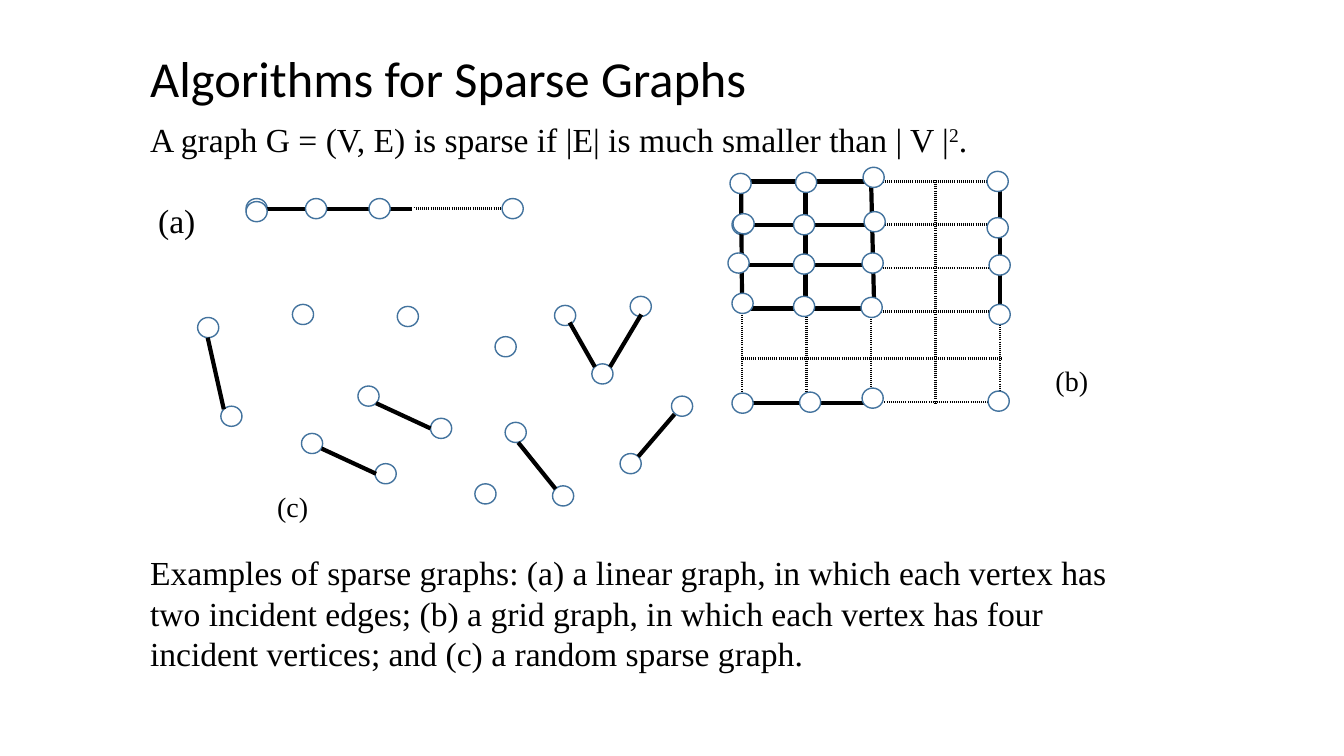
from pptx import Presentation
from pptx.dml.color import RGBColor
from pptx.enum.shapes import MSO_CONNECTOR, MSO_SHAPE
from pptx.enum.text import MSO_ANCHOR, PP_ALIGN
from pptx.oxml import parse_xml
from pptx.oxml.ns import nsdecls
from pptx.util import Inches, Pt

BLACK = RGBColor(0x00, 0x00, 0x00)
WHITE = RGBColor(0xFF, 0xFF, 0xFF)
VERTEX_BLUE = RGBColor(0x43, 0x73, 0x9E)
SERIF = "Times New Roman"

LINEAR_VERTICES = [(0.04, 0.1), (0.63, 0.07), (1.26, 0.07), (2.58, 0.07)]

GRID_DOTS = [["", "", "TRB", "LTB"]] * 3 + [
    ["LRB", "LRB", "LT", "TR"],
    ["LTR", "LTR", "LB", "RB"],
]
GRID_EDGES = [
    (0.15, 0.2, 1.44, 0.2), (0.15, 0.63, 1.44, 0.63), (0.15, 1.03, 1.44, 1.03),
    (0.16, 1.46, 1.43, 1.46), (0.15, 0.19, 0.16, 1.42), (0.18, 2.4, 1.44, 2.4),
    (0.79, 0.23, 0.79, 1.46), (1.44, 0.2, 1.47, 1.43), (2.72, 0.26, 2.72, 1.49),
]
GRID_VERTICES = [
    (0.02, 0.91), (0.07, 0.52), (0.04, 0.12), (0.69, 0.11), (1.36, 0.06),
    (2.59, 0.1), (2.59, 0.56), (1.37, 0.5), (0.67, 0.53), (0.67, 0.92),
    (1.35, 0.91), (2.61, 0.93), (0.06, 1.31), (0.67, 1.34), (1.34, 1.35),
    (2.61, 1.42), (2.6, 2.28), (1.35, 2.25), (0.73, 2.29), (0.06, 2.3),
]

RANDOM_VERTICES = [
    (0.06, 0.25), (0.29, 1.13), (1.09, 1.4), (1.82, 1.7), (1.65, 0.93),
    (2.37, 1.25), (1, 0.12), (2.04, 0.14), (3.01, 0.44), (2.81, 1.9),
    (3.11, 1.29), (3.58, 1.92), (3.6, 0.13), (4.35, 0.04), (3.97, 0.71),
    (4.25, 1.6), (4.76, 1.03),
]
RANDOM_EDGES = [
    (0.16, 0.45, 0.32, 1.16), (1.83, 1.1, 2.37, 1.35), (1.29, 1.55, 1.83, 1.8),
    (3.24, 1.49, 3.61, 1.95), (3.75, 0.3, 4, 0.74), (4.46, 0.22, 4.15, 0.74),
    (4.79, 1.21, 4.43, 1.63),
]


def write(paragraph, text, size=24, font=SERIF, color=BLACK, raised=False):
    """Append a formatted run to a paragraph."""
    run = paragraph.add_run()
    run.text = text
    run.font.size = Pt(size)
    run.font.name = font
    run.font.color.rgb = color
    if raised:
        run.font._element.set("baseline", "30000")


def add_label(slide, left, top, text):
    """Add the letter that names one of the graphs."""
    label = slide.shapes.add_textbox(Inches(left), Inches(top), Inches(0.67), Inches(0.44))
    label.text_frame.word_wrap = True
    write(label.text_frame.paragraphs[0], text, size=20)


def add_vertices(slide, left, top, vertices):
    """Add white round vertices at offsets from the graph's corner."""
    for x, y in vertices:
        vertex = slide.shapes.add_shape(
            MSO_SHAPE.OVAL, Inches(left + x), Inches(top + y), Inches(0.21), Inches(0.2))
        vertex.shadow.inherit = False
        vertex.fill.solid()
        vertex.fill.fore_color.rgb = WHITE
        vertex.line.color.rgb = VERTEX_BLUE
        vertex.line.width = Pt(1)


def add_edges(slide, left, top, edges):
    """Add thick black edges at offsets from the graph's corner."""
    for x1, y1, x2, y2 in edges:
        edge = slide.shapes.add_connector(
            MSO_CONNECTOR.STRAIGHT, Inches(left + x1), Inches(top + y1),
            Inches(left + x2), Inches(top + y2))
        edge.line.color.rgb = BLACK
        edge.line.width = Pt(3)
        edge._element.spPr.append(parse_xml(f"<a:effectLst {nsdecls('a')}/>"))


def add_dotted_table(slide, left, top, widths, heights, dots):
    """Add a white table whose listed cell sides are dotted."""
    table = slide.shapes.add_table(
        len(heights), len(widths), Inches(left), Inches(top),
        Inches(sum(widths)), Inches(sum(heights))).table
    table.first_row = table.horz_banding = False
    for column, width in zip(table.columns, widths):
        column.width = Inches(width)
    for row, height, row_dots in zip(table.rows, heights, dots):
        row.height = Inches(height)
        for cell, sides in zip(row.cells, row_dots):
            properties = cell._tc.get_or_add_tcPr()
            for side in "LRTB":
                if side in sides:
                    properties.append(parse_xml(
                        f'<a:ln{side} {nsdecls("a")} w="28575"><a:solidFill>'
                        f'<a:srgbClr val="{BLACK}"/></a:solidFill>'
                        f'<a:prstDash val="dot"/></a:ln{side}>'))
            cell.fill.solid()
            cell.fill.fore_color.rgb = WHITE


def add_title(slide, left, top, width, height):
    """Place and format the slide title."""
    title = slide.shapes.title
    title.left, title.top = Inches(left), Inches(top)
    title.width, title.height = Inches(width), Inches(height)
    title.text_frame.word_wrap = False
    title.text_frame.vertical_anchor = MSO_ANCHOR.TOP
    heading = title.text_frame.paragraphs[0]
    heading.alignment = PP_ALIGN.LEFT
    write(heading, "Algorithms for Sparse Graphs", size=36, font="Calibri")


def add_body(slide, left, top, width, height):
    """Add the definition, the first graph's letter and the explanation."""
    body = slide.shapes.add_textbox(Inches(left), Inches(top), Inches(width), Inches(height))
    frame = body.text_frame
    frame.word_wrap = True
    definition, letter, explanation = (
        frame.paragraphs[0], frame.add_paragraph(), frame.add_paragraph())
    for paragraph, gap in ((definition, 0), (letter, 28.8), (explanation, 223.2)):
        paragraph.line_spacing = Pt(28.8)
        paragraph.space_before = Pt(gap)
    write(definition, "A graph G = (V, E) is sparse if |E| is much smaller than | V |")
    write(definition, "2", raised=True)
    write(definition, ".")
    letter._p.get_or_add_pPr().set("marL", str(Inches(0.08)))
    write(letter, "(a)")
    write(explanation, "Examples of sparse graphs: (a) a linear graph, in which each vertex has "
          "two incident edges; (b) a grid graph, in which each vertex has four "
          "incident vertices; and (c) a random sparse graph.")


def add_linear_graph(slide, left, top):
    """Draw the chain of vertices with its dotted continuation."""
    add_vertices(slide, left, top, [(0.04, 0.07)])
    add_dotted_table(slide, left + 0.12, top + 0.17, [0.53, 0.64, 0.42, 0.53, 0.53],
                     [0.41], [["", "", "", "T", "T"]])
    add_edges(slide, left, top, [(0.12, 0.17, 1.69, 0.17)])
    add_vertices(slide, left, top, LINEAR_VERTICES)


def add_grid_graph(slide, left, top):
    """Draw the grid of vertices with its dotted continuation."""
    add_dotted_table(slide, left + 0.16, top + 0.2, [0.64] * 4,
                     [0.43, 0.43, 0.43, 0.47, 0.43], GRID_DOTS)
    add_vertices(slide, left, top, [(0.06, 0.53)])
    add_edges(slide, left, top, GRID_EDGES)
    add_vertices(slide, left, top, GRID_VERTICES)
    add_label(slide, left + 3.17, top + 1.96, "(b)")


def add_random_graph(slide, left, top):
    """Draw the scattered vertices and their few edges."""
    add_vertices(slide, left, top, RANDOM_VERTICES)
    add_edges(slide, left, top, RANDOM_EDGES)
    add_label(slide, left + 0.75, top + 1.91, "(c)")


def main():
    """Build and save the slide."""
    deck = Presentation()
    deck.slide_width, deck.slide_height = Inches(13.33), Inches(7.5)
    slide = deck.slides.add_slide(deck.slide_layouts[5])
    add_title(slide, 1.39, 0.42, 6.17, 0.71)
    add_body(slide, 1.39, 1.13, 10.21, 5.65)
    add_grid_graph(slide, 7.2, 1.6)
    add_linear_graph(slide, 2.4, 1.9)
    add_random_graph(slide, 1.9, 2.9)
    deck.save("out.pptx")


if __name__ == "__main__":
    main()
